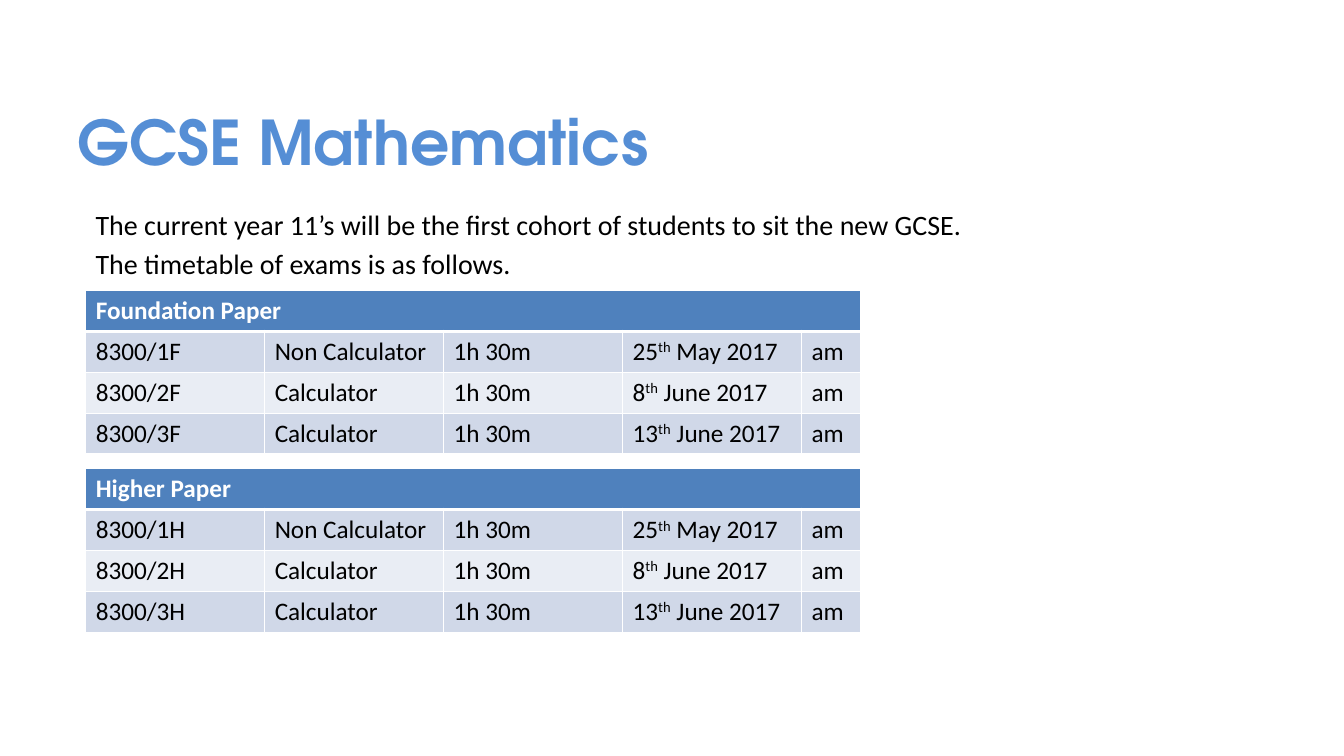
"""Build the GCSE Mathematics exam timetable slide."""
from lxml.etree import SubElement
from pptx import Presentation
from pptx.dml.color import RGBColor
from pptx.enum.text import MSO_ANCHOR
from pptx.oxml.ns import qn
from pptx.util import Cm, Pt

BLACK = RGBColor(0x00, 0x00, 0x00)
WHITE = RGBColor(0xFF, 0xFF, 0xFF)
TITLE_BLUE = RGBColor(0x55, 0x8E, 0xD5)
HEADER_BLUE = RGBColor(0x4F, 0x81, 0xBD)
BANDS = [RGBColor(0xD0, 0xD8, 0xE8), RGBColor(0xE9, 0xED, 0xF4)]

INTRODUCTION = [
    "The current year 11’s will be the first cohort of students to sit the new GCSE.",
    "The timetable of exams is as follows.",
]
EXAMS = [
    ("Non Calculator", "25", " May 2017"),
    ("Calculator", "8", " June 2017"),
    ("Calculator", "13", " June 2017"),
]
TIERS = [("Foundation Paper", "F", 7.32), ("Higher Paper", "H", 11.81)]
COLUMN_WIDTHS = [4.51, 4.51, 4.51, 4.51, 1.48]
ROW_HEIGHT = 1.03


def add_span(para, text, size, color, bold=False, name="Calibri"):
    span = para.add_run()
    span.text = text
    span.font.name = name
    span.font.size = Pt(size)
    span.font.bold = bold
    span.font.color.rgb = color
    return span


def style_cell(cell, fill, top, bottom):
    properties = cell._tc.get_or_add_tcPr()
    for side, points in (("L", 1), ("R", 1), ("T", top), ("B", bottom)):
        line = SubElement(properties, qn(f"a:ln{side}"), w=str(Pt(points)))
        paint = SubElement(line, qn("a:solidFill"))
        SubElement(paint, qn("a:srgbClr"), val=str(WHITE))
    cell.fill.solid()
    cell.fill.fore_color.rgb = fill


deck = Presentation()
deck.slide_width = Cm(33.87)
deck.slide_height = Cm(19.05)
page = deck.slides.add_slide(deck.slide_layouts[6])

body_box = page.shapes.add_textbox(Cm(2.16), Cm(5.11), Cm(30), Cm(11.2))
body_box.text_frame.word_wrap = True
for index, sentence in enumerate(INTRODUCTION):
    if index == 0:
        para = body_box.text_frame.paragraphs[0]
    else:
        para = body_box.text_frame.add_paragraph()
        para.space_before = Pt(4)
    add_span(para, sentence, 20, BLACK)

title_box = page.shapes.add_textbox(Cm(1.7), Cm(1.96), Cm(30.48), Cm(3.18))
title_box.text_frame.word_wrap = True
title_box.text_frame.vertical_anchor = MSO_ANCHOR.MIDDLE
add_span(title_box.text_frame.paragraphs[0], "GCSE Mathematics", 44, TITLE_BLUE,
         bold=True, name="TeX Gyre Adventor")

for heading, letter, top in TIERS:
    row_count = len(EXAMS) + 1
    timetable = page.shapes.add_table(
        row_count, len(COLUMN_WIDTHS), Cm(2.16), Cm(top),
        Cm(sum(COLUMN_WIDTHS)), Cm(ROW_HEIGHT * row_count)).table
    timetable.horz_banding = False
    for column, width in zip(timetable.columns, COLUMN_WIDTHS):
        column.width = Cm(width)
    for row in timetable.rows:
        row.height = Cm(ROW_HEIGHT)

    for cell in timetable.rows[0].cells:
        style_cell(cell, HEADER_BLUE, 1, 3)
    header = timetable.cell(0, 0)
    header.merge(timetable.cell(0, len(COLUMN_WIDTHS) - 1))
    add_span(header.text_frame.paragraphs[0], heading, 18, WHITE, bold=True)

    for number, (kind, day, month) in enumerate(EXAMS, start=1):
        entries = [[f"8300/{number}{letter}"], [kind], ["1h 30m"],
                   [day, "th", month], ["am"]]
        for cell, pieces in zip(timetable.rows[number].cells, entries):
            style_cell(cell, BANDS[(number - 1) % 2], 3 if number == 1 else 1, 1)
            for piece in pieces:
                span = add_span(cell.text_frame.paragraphs[0], piece, 18, BLACK)
                if piece == "th":
                    span.font._element.set("baseline", "30000")

deck.save("out.pptx")
